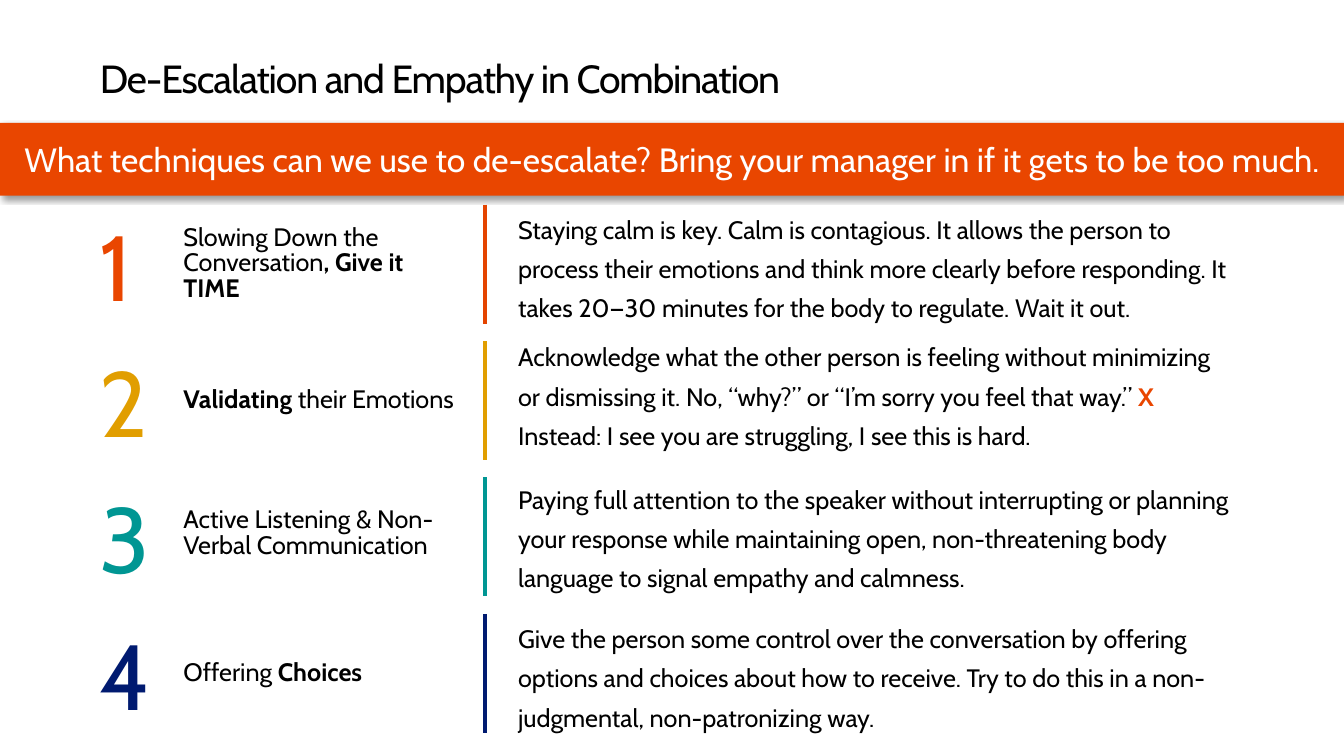
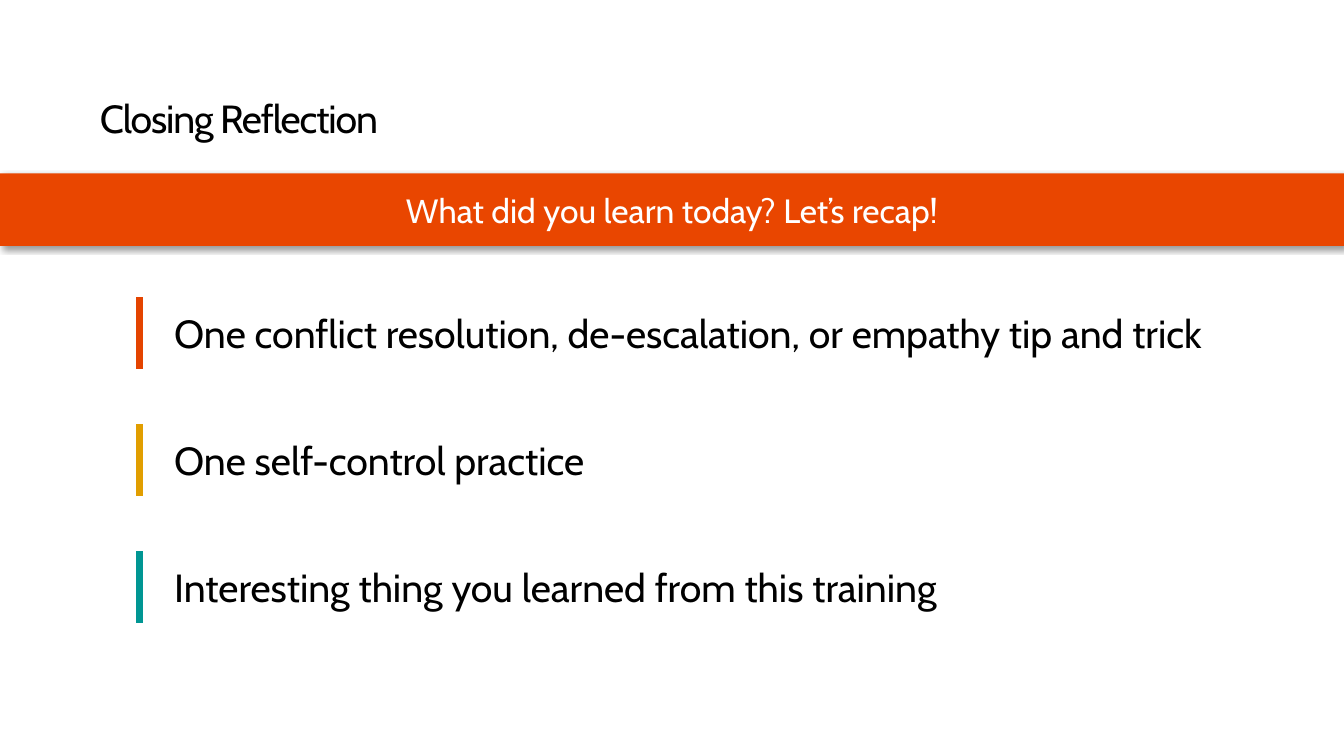
from dataclasses import dataclass

from lxml import etree
from pptx import Presentation
from pptx.dml.color import RGBColor
from pptx.enum.shapes import MSO_CONNECTOR, MSO_SHAPE
from pptx.enum.text import MSO_ANCHOR, PP_ALIGN
from pptx.oxml.ns import qn
from pptx.util import Inches, Pt

STRAIGHT = MSO_CONNECTOR.STRAIGHT
RECTANGLE = MSO_SHAPE.RECTANGLE
TOP, MIDDLE, BOTTOM = MSO_ANCHOR.TOP, MSO_ANCHOR.MIDDLE, MSO_ANCHOR.BOTTOM
CENTER = PP_ALIGN.CENTER


@dataclass(frozen=True)
class Theme:
    font: str = "Cabin"
    ink: str = "000000"
    paper: str = "FFFFFF"
    orange: str = "E94600"
    bars: tuple = ("E44400", "E19E00", "009693", "001A70")
    digits: tuple = ("E94600", "E19E00", "009693", "001A70")
    title_size: int = 28
    band_size: int = 24
    body_size: int = 18
    digit_size: int = 66
    prompt_size: int = 28
    title_spacing: int = -80


THEME = Theme()
SLIDE_WIDTH, SLIDE_HEIGHT = 13.33, 7.5
NO_INSETS = (0, 0, 0, 0)
BOX_INSETS = (0.1, 0.05, 0.1, 0.05)

BOLD = {"bold": True}
CROSS = {"bold": True, "color": THEME.orange}

TECHNIQUES = {
    "title": "De-Escalation and Empathy in Combination",
    "band": "What techniques can we use to de-escalate? "
            "Bring your manager in if it gets to be too much.",
    "title_top": 0.36,
    "rows": [
        {"label": [("Slowing Down the Conversation", {}), (", Give it TIME", BOLD)],
         "body": [("Staying calm is key. Calm is contagious. It allows the person to process "
                   "their emotions and think more clearly before responding. It takes "
                   "20—30 minutes for the body to regulate. Wait it out.", {})]},
        {"label": [("Validating", BOLD), (" their Emotions", {})],
         "body": [("Acknowledge what the other person is feeling without minimizing or "
                   "dismissing it. No, “why?” or “I’m sorry you feel that way.” ", {}),
                  ("X ", CROSS),
                  ("Instead: I see you are struggling, I see this is hard.", {})],
         "body_shift": -0.09},
        {"label": [("Active Listening & Non-Verbal Communication", {})],
         "body": [("Paying full attention to the speaker without interrupting or planning "
                   "your response while maintaining open, non-threatening body language "
                   "to signal empathy and calmness.", {})],
         "label_shift": -0.03, "body_shift": -0.03},
        {"label": [("Offering ", {}), ("Choices", BOLD)],
         "body": [("Give the person some control over the conversation by offering options "
                   "and choices about how to receive. Try to do this in a non-judgmental, "
                   "non-patronizing way.", {})]},
    ],
}

REFLECTION = {
    "title": "Closing Reflection",
    "band": "What did you learn today? Let’s recap!",
    "title_top": 0.76,
    "prompts": [
        "One conflict resolution, de-escalation, or empathy tip and trick",
        "One self-control practice",
        "Interesting thing you learned from this training",
    ],
}


def rgb(color):
    return RGBColor.from_string(color)


def write(shape, spans, size, color=THEME.ink, insets=BOX_INSETS, anchor=MIDDLE,
          line_spacing=None, align=None):
    frame = shape.text_frame
    frame.word_wrap = True
    frame.vertical_anchor = anchor
    (frame.margin_left, frame.margin_top,
     frame.margin_right, frame.margin_bottom) = map(Inches, insets)
    para = frame.paragraphs[0]
    para.line_spacing = line_spacing
    para.alignment = align
    para.font.name = THEME.font
    para.font.size = Pt(size)
    para.font.color.rgb = rgb(color)
    for text, style in spans:
        span = para.add_run()
        span.text = text
        if "bold" in style:
            span.font.bold = style["bold"]
        if "color" in style:
            span.font.color.rgb = rgb(style["color"])
    return para


def add_text(shapes, area, spans, size, **options):
    box = shapes.add_textbox(*map(Inches, area))
    return write(box, spans, size, **options)


def add_bar(shapes, x, top, height, color, width):
    bar = shapes.add_connector(STRAIGHT, Inches(x), Inches(top), Inches(x), Inches(top + height))
    bar.line.color.rgb = rgb(color)
    bar.line.width = Pt(width)
    etree.SubElement(bar._element.spPr, qn("a:effectLst"))


def add_band_shadow(band):
    band.shadow.inherit = False
    effects = band._element.spPr.find(qn("a:effectLst"))
    shadow = etree.SubElement(effects, qn("a:outerShdw"), blurRad=str(Pt(4)), dist=str(Pt(3)),
                              dir=str(45 * 60000), algn="tl", rotWithShape="0")
    color = etree.SubElement(shadow, qn("a:srgbClr"), val=THEME.ink)
    etree.SubElement(color, qn("a:alpha"), val="40000")


def add_page(deck, content):
    page = deck.slides.add_slide(deck.slide_layouts[6])
    title_top = content["title_top"]
    band_top = title_top + (0.86 if "rows" in content else 0.96)
    title = add_text(page.shapes, (0.99, title_top, 11.33, 0.65), [(content["title"], {})],
                     THEME.title_size, insets=(0, 0.05, 0, 0), anchor=BOTTOM, line_spacing=0.9)
    title.runs[0]._r.get_or_add_rPr().set("spc", str(THEME.title_spacing))
    band = page.shapes.add_shape(RECTANGLE, *map(Inches, (0, band_top, SLIDE_WIDTH, 0.72)))
    band.fill.solid()
    band.fill.fore_color.rgb = rgb(THEME.orange)
    band.line.fill.background()
    add_band_shadow(band)
    write(band, [(content["band"], {})], THEME.band_size, color=THEME.paper, align=CENTER)
    return page


def add_techniques(deck):
    shapes = add_page(deck, TECHNIQUES).shapes
    first_top, last_top, height = 2.03, 6.09, 1.18
    rows = TECHNIQUES["rows"]
    pitch = (last_top - first_top) / (len(rows) - 1)
    for index, row in enumerate(rows):
        top = first_top + index * pitch
        label_top = top + row.get("label_shift", 0)
        body_top = top + row.get("body_shift", 0)
        add_text(shapes, (0.99, top, 0.79, height), [(str(index + 1), {})],
                 THEME.digit_size, color=THEME.digits[index], insets=NO_INSETS)
        add_text(shapes, (1.82, label_top, 2.76, height), row["label"],
                 THEME.body_size, insets=NO_INSETS, line_spacing=0.85)
        add_bar(shapes, 4.81, top, height, THEME.bars[index], 3)
        add_text(shapes, (5.04, body_top, 7.28, height), row["body"],
                 THEME.body_size, line_spacing=1.3)


def add_reflection(deck):
    page = add_page(deck, REFLECTION)
    first_top, pitch = 2.95, 1.26
    for index, prompt in enumerate(REFLECTION["prompts"]):
        top = first_top + index * pitch
        shapes = page.shapes.add_group_shape().shapes
        add_text(shapes, (1.63, top + 0.07, 10.7, 0.57), [(prompt, {})],
                 THEME.prompt_size, anchor=TOP)
        add_bar(shapes, 1.38, top, 0.71, THEME.bars[index], 5)


def main():
    deck = Presentation()
    deck.slide_width = Inches(SLIDE_WIDTH)
    deck.slide_height = Inches(SLIDE_HEIGHT)
    add_techniques(deck)
    add_reflection(deck)
    deck.save("out.pptx")


if __name__ == "__main__":
    main()
